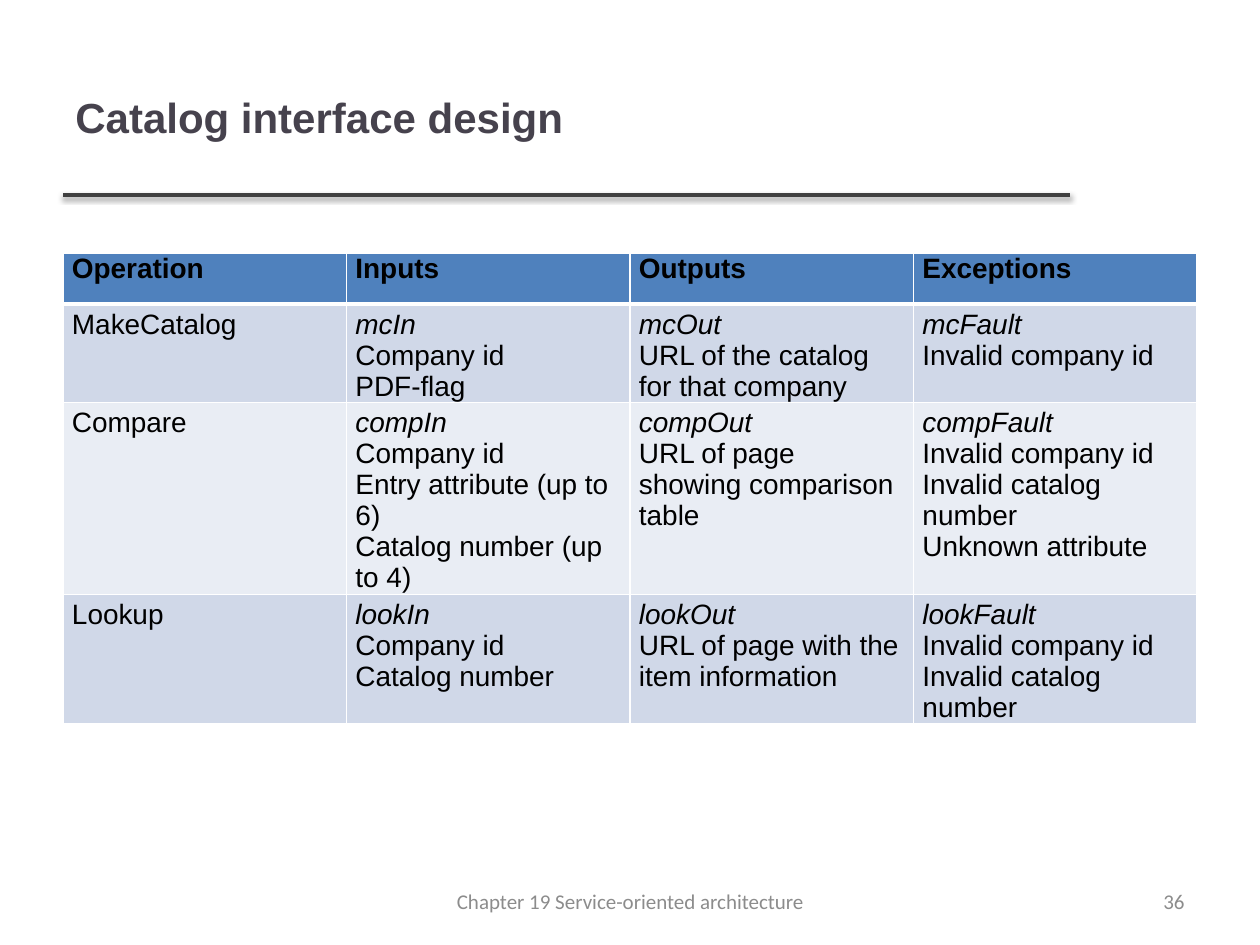
from dataclasses import dataclass

from lxml import etree
from pptx import Presentation
from pptx import util as u
from pptx.dml.color import RGBColor
from pptx.enum import shapes, text
from pptx.oxml import parse_xml
from pptx.oxml.ns import nsdecls, qn

PX = u.Inches(10) / 1260
COLORS = {
    "title": "46424D", "rule": "404040", "head": "4F81BD", "odd": "D0D8E8",
    "even": "E9EDF4", "edge": "FFFFFF", "ink": "000000", "foot": "8C8C8C",
}
ALIGN = text.PP_ALIGN


@dataclass
class Style:
    size: int
    color: str
    font: str = "Arial"
    bold: bool = False


@dataclass
class Label:
    words: str
    left: int
    top: int
    width: int
    height: int
    style: Style
    align: ALIGN = ALIGN.LEFT


@dataclass
class Row:
    height: int
    fill: str
    cells: list[list[str]]


HEAD = Style(16, "ink", bold=True)
BODY = Style(16, "ink")
FOOT = Style(12, "foot", "Calibri")

LABELS = [
    Label("Catalog interface design", 63, 38, 1006, 157, Style(24, "title", bold=True)),
    Label("36", 903, 876, 294, 50, FOOT, ALIGN.RIGHT),
    Label("Chapter 19 Service-oriented architecture", 431, 876, 399, 50, FOOT, ALIGN.CENTER),
]

ROWS = [
    Row(51, "head", [["Operation"], ["Inputs"], ["Outputs"], ["Exceptions"]]),
    Row(98, "odd", [
        ["MakeCatalog"],
        ["mcIn\nCompany id", "PDF-flag"],
        ["mcOut", "URL of the catalog for that company"],
        ["mcFault", "Invalid company id"],
    ]),
    Row(192, "even", [
        ["Compare"],
        ["compIn", "Company id", "Entry attribute (up to 6)\nCatalog number (up to 4)"],
        ["compOut", "URL of page showing comparison table"],
        ["compFault", "Invalid company id", "Invalid catalog number", "Unknown attribute"],
    ]),
    Row(129, "odd", [
        ["Lookup"],
        ["lookIn", "Company id", "Catalog number"],
        ["lookOut", "URL of page with the item information"],
        ["lookFault", "Invalid company id", "Invalid catalog number"],
    ]),
]


def px(count: int) -> int:
    return round(count * PX)


def rgb(name: str) -> RGBColor:
    return RGBColor.from_string(COLORS[name])


def add_run(para, words: str, style: Style, slant: bool = False) -> None:
    run = para.add_run()
    run.text = words
    font = run.font
    font.name, font.size = style.font, u.Pt(style.size)
    font.bold, font.italic = style.bold, slant
    font.color.rgb = rgb(style.color)


def add_label(slide, label: Label) -> None:
    box = slide.shapes.add_textbox(
        px(label.left), px(label.top), px(label.width), px(label.height))
    frame = box.text_frame
    frame.word_wrap = True
    frame.vertical_anchor = text.MSO_ANCHOR.MIDDLE
    para = frame.paragraphs[0]
    para.alignment = label.align
    add_run(para, label.words, label.style)


def add_rule(slide) -> None:
    line = slide.shapes.add_connector(
        shapes.MSO_CONNECTOR.STRAIGHT, px(63), px(195), px(1070), px(195))
    line.line.color.rgb = rgb("rule")
    line.line.width = u.Pt(2)
    line._element.spPr.append(parse_xml(
        f'<a:effectLst {nsdecls("a")}><a:outerShdw blurRad="{u.Pt(3.1)}" '
        f'dist="{u.Pt(1.6)}" dir="5400000" rotWithShape="0">'
        '<a:srgbClr val="000000"><a:alpha val="38000"/></a:srgbClr>'
        '</a:outerShdw></a:effectLst>'))


def add_edges(cell, base: int) -> None:
    props = cell._tc.get_or_add_tcPr()
    for index, (side, width) in enumerate(zip("LRTB", (1, 1, 1, base))):
        edge = etree.Element(qn(f"a:ln{side}"), w=str(u.Pt(width)))
        fill = etree.SubElement(edge, qn("a:solidFill"))
        etree.SubElement(fill, qn("a:srgbClr"), val=COLORS["edge"])
        props.insert(index, edge)


def fill_cell(cell, paras: list[str], row: Row, col: int) -> None:
    head = row.fill == "head"
    cell.fill.solid()
    cell.fill.fore_color.rgb = rgb(row.fill)
    cell.margin_left = cell.margin_right = px(9)
    cell.margin_top, cell.margin_bottom = px(0 if head else 5), 0
    add_edges(cell, 3 if head else 1)
    frame = cell.text_frame
    for num, words in enumerate(paras):
        para = frame.add_paragraph() if num else frame.paragraphs[0]
        para.alignment = ALIGN.JUSTIFY if head and col != 1 else ALIGN.LEFT
        if head:
            para.space_after = u.Pt(3)
        for part, line in enumerate(words.split("\n")):
            if part:
                para.add_line_break()
            slant = not head and col > 0 and num == part == 0
            add_run(para, line, HEAD if head else BODY, slant)


def add_grid(slide, rows: list[Row]) -> None:
    high = sum(row.height for row in rows)
    grid = slide.shapes.add_table(
        len(rows), len(rows[0].cells), px(63), px(253), px(1134), px(high)).table
    for index, row in enumerate(rows):
        grid.rows[index].height = px(row.height)
        for col, paras in enumerate(row.cells):
            fill_cell(grid.cell(index, col), paras, row, col)


def main() -> None:
    deck = Presentation()
    deck.slide_width, deck.slide_height = px(1260), px(945)
    slide = deck.slides.add_slide(deck.slide_layouts[6])
    add_rule(slide)
    add_grid(slide, ROWS)
    for label in LABELS:
        add_label(slide, label)
    deck.save("out.pptx")


if __name__ == "__main__":
    main()
